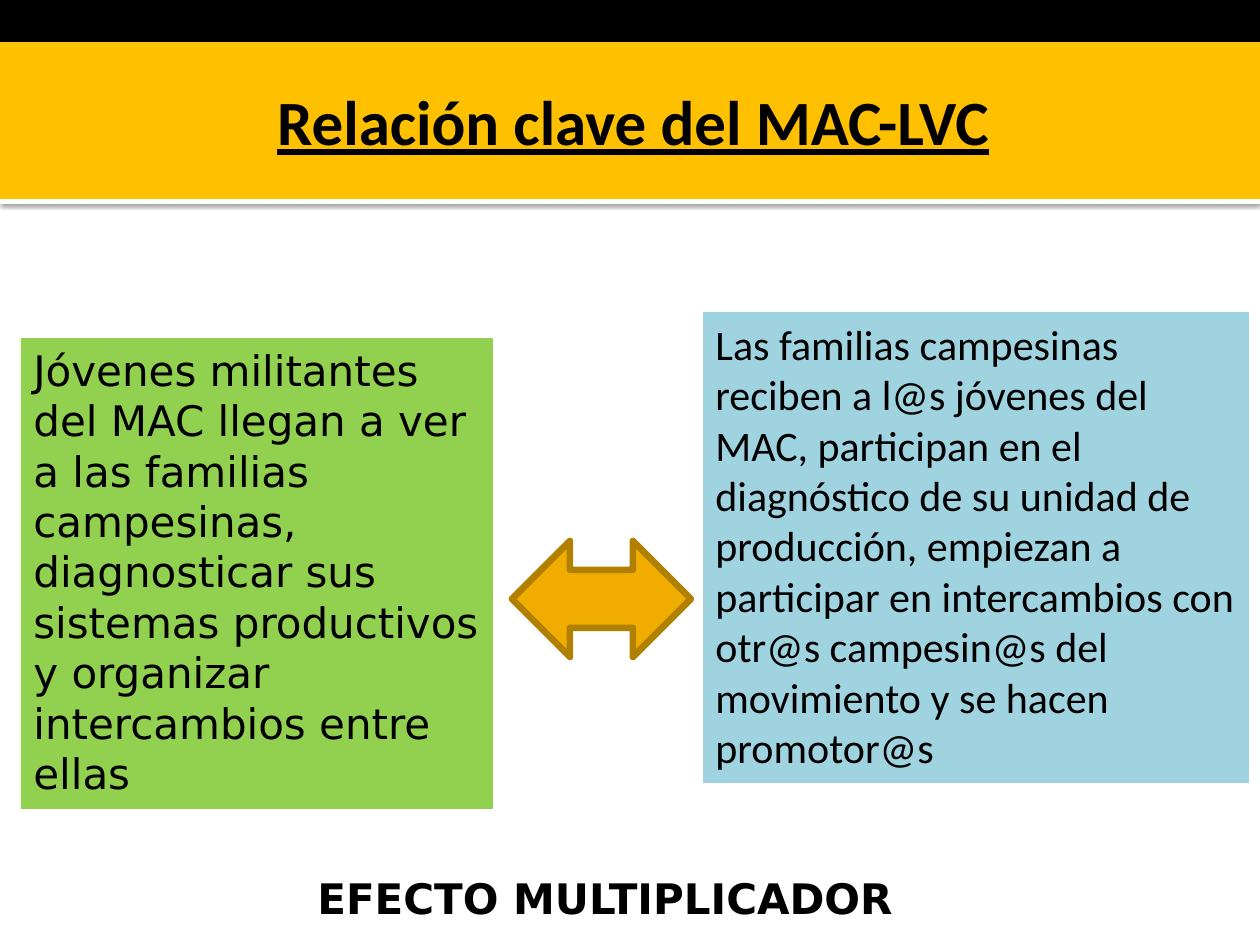
from dataclasses import dataclass, field
from typing import Optional

from lxml import etree
from pptx import Presentation
from pptx import util as u
from pptx.dml.color import RGBColor
from pptx.enum import shapes, text
from pptx.oxml import ns

SCALE = 914400 / 126
KIND = shapes.MSO_SHAPE


def px(n: int) -> u.Emu:
    return u.Emu(round(n * SCALE))


@dataclass(frozen=True)
class Theme:
    black: str = "000000"
    white: str = "FFFFFF"
    gold: str = "FFC000"
    amber: str = "F0AD00"
    edge: str = "B28000"
    green: str = "92D050"
    blue: str = "A0D3E0"
    head: int = 36
    body: int = 24
    line: float = 3.78
    sans: str = "Calibri"
    wide: str = "DejaVu Sans"


THEME = Theme()


@dataclass(frozen=True)
class Label:
    words: str
    font: str
    size: int = THEME.body
    marks: dict = field(default_factory=dict)
    frame: dict = field(default_factory=dict)
    align: text.PP_ALIGN = text.PP_ALIGN.LEFT


@dataclass(frozen=True)
class Box:
    area: tuple[int, int, int, int]
    fill: Optional[str] = None
    label: Optional[Label] = None
    kind: KIND = KIND.RECTANGLE
    edge: Optional[str] = None
    shade: bool = False


BOXES = [
    Box((0, 198, 1260, 6), THEME.white, shade=True),
    Box((0, 0, 1260, 198), THEME.black),
    Box((0, 42, 1260, 157), THEME.gold, Label(
        "Relación clave del MAC-LVC", THEME.sans, THEME.head,
        {"bold": True, "underline": True},
        {"vertical_anchor": text.MSO_ANCHOR.MIDDLE, "margin_right": px(6)},
        text.PP_ALIGN.CENTER)),
    Box((512, 541, 179, 116), THEME.amber,
        kind=KIND.LEFT_RIGHT_ARROW, edge=THEME.edge),
    Box((21, 338, 472, 471), THEME.green, Label(
        "Jóvenes militantes del MAC llegan a ver a las familias campesinas, "
        "diagnosticar sus sistemas productivos y organizar intercambios "
        "entre ellas", THEME.wide)),
    Box((703, 312, 546, 471), THEME.blue, Label(
        "Las familias campesinas reciben a l@s jóvenes del MAC, participan "
        "en el diagnóstico de su unidad de producción, empiezan a participar "
        "en intercambios con otr@s campesin@s del movimiento y se hacen "
        "promotor@s", THEME.sans)),
    Box((305, 866, 955, 64), label=Label(
        "EFECTO MULTIPLICADOR", THEME.wide, marks={"bold": True})),
]


def apply(item, values: dict) -> None:
    for name, value in values.items():
        setattr(item, name, value)


def write(shape, label: Label) -> None:
    frame = shape.text_frame
    apply(frame, {"word_wrap": True,
                  "vertical_anchor": text.MSO_ANCHOR.TOP} | label.frame)
    para = frame.paragraphs[0]
    para.alignment = label.align
    run = para.add_run()
    run.text = label.words
    apply(run.font, {"name": label.font, "size": u.Pt(label.size)} | label.marks)
    run.font.color.rgb = RGBColor.from_string(THEME.black)


def shade(shape) -> None:
    glow = shape._element.spPr.find(ns.qn("a:effectLst"))
    drop = etree.SubElement(glow, ns.qn("a:outerShdw"), {
        "blurRad": str(u.Pt(2.5)), "dist": str(u.Pt(0.8)),
        "dir": "5400000", "rotWithShape": "0"})
    tint = etree.SubElement(drop, ns.qn("a:srgbClr"), val=THEME.black)
    etree.SubElement(tint, ns.qn("a:alpha"), val="60000")


def draw(slide, box: Box) -> None:
    area = [px(n) for n in box.area]
    if box.fill is None:
        shape = slide.shapes.add_textbox(*area)
    else:
        shape = slide.shapes.add_shape(box.kind, *area)
        shape.shadow.inherit = False
        shape.fill.solid()
        shape.fill.fore_color.rgb = RGBColor.from_string(box.fill)
        if box.edge:
            shape.line.color.rgb = RGBColor.from_string(box.edge)
            shape.line.width = u.Pt(THEME.line)
        else:
            shape.line.fill.background()
    if box.shade:
        shade(shape)
    if box.label:
        write(shape, box.label)


def main() -> None:
    deck = Presentation()
    apply(deck, {"slide_width": px(1260), "slide_height": px(945)})
    slide = deck.slides.add_slide(deck.slide_layouts[6])
    for box in BOXES:
        draw(slide, box)
    deck.save("out.pptx")


if __name__ == "__main__":
    main()
